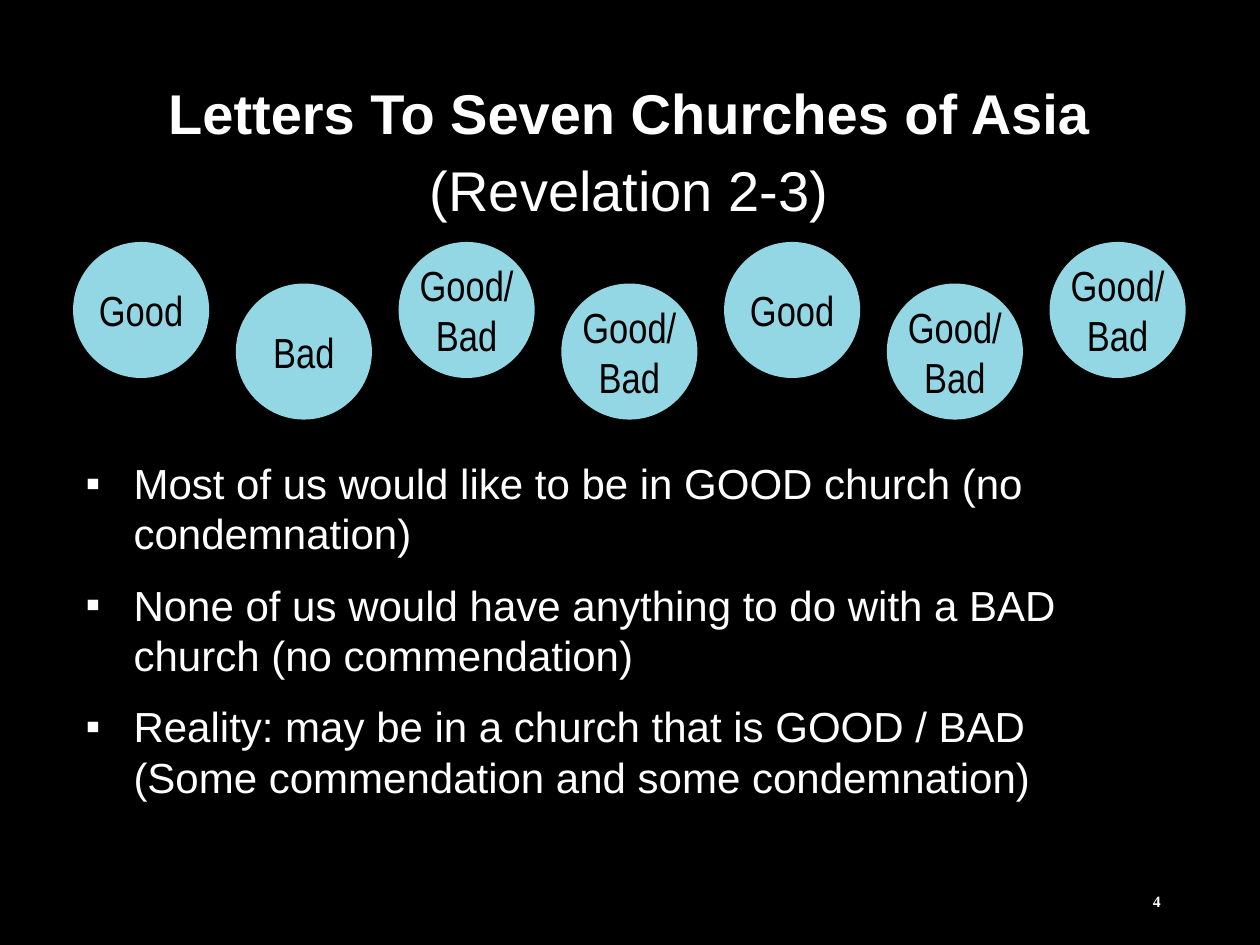
import dataclasses

import lxml.etree
import pptx
import pptx.dml.color
import pptx.enum.shapes
import pptx.enum.text
import pptx.oxml.ns
import pptx.util

ALIGN = pptx.enum.text.PP_ALIGN
ANCHOR = pptx.enum.text.MSO_ANCHOR


@dataclasses.dataclass(frozen=True)
class Theme:
    background: str = "000000"
    light: str = "FFFFFF"
    dark: str = "000000"
    circle: str = "94D7E4"
    sans: str = "Arial"
    narrow: str = "Arial Narrow"
    serif: str = "Times New Roman"
    title_size: int = 32
    body_size: int = 24
    number_size: int = 9


class SlideBuilder:
    margin = 0.58
    content_width = 8.83

    def __init__(self, presentation, theme):
        self.theme = theme
        self.slide = presentation.slides.add_slide(presentation.slide_layouts[1])
        fill = self.slide.background.fill
        fill.solid()
        fill.fore_color.rgb = pptx.dml.color.RGBColor.from_string(theme.background)

    def place(self, shape, *box):
        for name, value in zip(("left", "top", "width", "height"), box):
            setattr(shape, name, pptx.util.Inches(value))

    def frame(self, shape, anchor, wrap=True):
        formats = {
            "vertical_anchor": anchor,
            "word_wrap": wrap,
            "auto_size": pptx.enum.text.MSO_AUTO_SIZE.NONE,
        }
        for name, value in formats.items():
            setattr(shape.text_frame, name, value)

    def style(self, paragraph, font, size, color, alignment, bold=False, before=0):
        paragraph.alignment = alignment
        paragraph.space_before = pptx.util.Pt(before)
        formats = {"name": font, "size": pptx.util.Pt(size), "bold": bold}
        for run in paragraph.runs:
            for name, value in formats.items():
                setattr(run.font, name, value)
            run.font.color.rgb = pptx.dml.color.RGBColor.from_string(color)

    def title(self, heading, subheading):
        shape = self.slide.shapes.title
        self.place(shape, self.margin, 0.57, self.content_width, 1.26)
        self.frame(shape, ANCHOR.TOP)
        shape.text_frame.text = f"{heading}\n{subheading}"
        for index, paragraph in enumerate(shape.text_frame.paragraphs):
            self.style(paragraph, self.theme.sans, self.theme.title_size,
                       self.theme.light, ALIGN.CENTER, index == 0, 6 * index)

    def circles(self, labels, top=1.92, drop=0.33, diameter=1.08):
        pitch = (self.content_width - diameter) / (len(labels) - 1)
        for column, label in enumerate(labels):
            self.circle(label, self.margin + column * pitch,
                        top + drop * (column % 2), diameter)

    def circle(self, label, left, top, diameter):
        box = [pptx.util.Inches(value) for value in (left, top, diameter, diameter)]
        shape = self.slide.shapes.add_shape(pptx.enum.shapes.MSO_SHAPE.OVAL, *box)
        shape.shadow.inherit = False
        shape.fill.solid()
        shape.fill.fore_color.rgb = pptx.dml.color.RGBColor.from_string(self.theme.circle)
        shape.line.fill.background()
        self.frame(shape, ANCHOR.MIDDLE, False)
        shape.text_frame.text = label
        for paragraph in shape.text_frame.paragraphs:
            self.style(paragraph, self.theme.narrow, self.theme.body_size,
                       self.theme.dark, ALIGN.CENTER)

    def bullets(self, items):
        shape = self.slide.placeholders[1]
        self.place(shape, self.margin, 3.58, 8.75, 2.93)
        self.frame(shape, ANCHOR.TOP)
        shape.text_frame.text = "\n".join(items)
        for index, paragraph in enumerate(shape.text_frame.paragraphs):
            self.style(paragraph, self.theme.sans, self.theme.body_size,
                       self.theme.light, ALIGN.LEFT, before=12 if index else 0)
            self.bullet(paragraph)

    def bullet(self, paragraph, indent=0.38):
        properties = paragraph._p.get_or_add_pPr()
        properties.set("marL", str(pptx.util.Inches(indent)))
        properties.set("indent", str(-pptx.util.Inches(indent)))
        qn = pptx.oxml.ns.qn
        color = lxml.etree.SubElement(properties, qn("a:buClr"))
        lxml.etree.SubElement(color, qn("a:srgbClr"), val=self.theme.light)
        lxml.etree.SubElement(properties, qn("a:buFont"), typeface=self.theme.sans)
        lxml.etree.SubElement(properties, qn("a:buChar"), char="▪")

    def page_number(self, number):
        box = [pptx.util.Inches(value) for value in (7.06, 6.95, 2.25, 0.4)]
        shape = self.slide.shapes.add_textbox(*box)
        self.frame(shape, ANCHOR.MIDDLE)
        shape.text_frame.text = str(number)
        self.style(shape.text_frame.paragraphs[0], self.theme.serif,
                   self.theme.number_size, self.theme.light, ALIGN.RIGHT, True)


def main():
    presentation = pptx.Presentation()
    presentation.slide_width = pptx.util.Inches(10)
    presentation.slide_height = pptx.util.Inches(7.5)
    builder = SlideBuilder(presentation, Theme())
    builder.title("Letters To Seven Churches of Asia", "(Revelation 2-3)")
    mixed = "Good/\nBad"
    builder.circles(["Good", "Bad", mixed, mixed, "Good", mixed, mixed])
    builder.bullets([
        "Most of us would like to be in GOOD church (no condemnation)",
        "None of us would have anything to do with a BAD church (no commendation)",
        "Reality: may be in a church that is GOOD / BAD\v(Some commendation and some condemnation)",
    ])
    builder.page_number(4)
    presentation.save("out.pptx")


if __name__ == "__main__":
    main()
